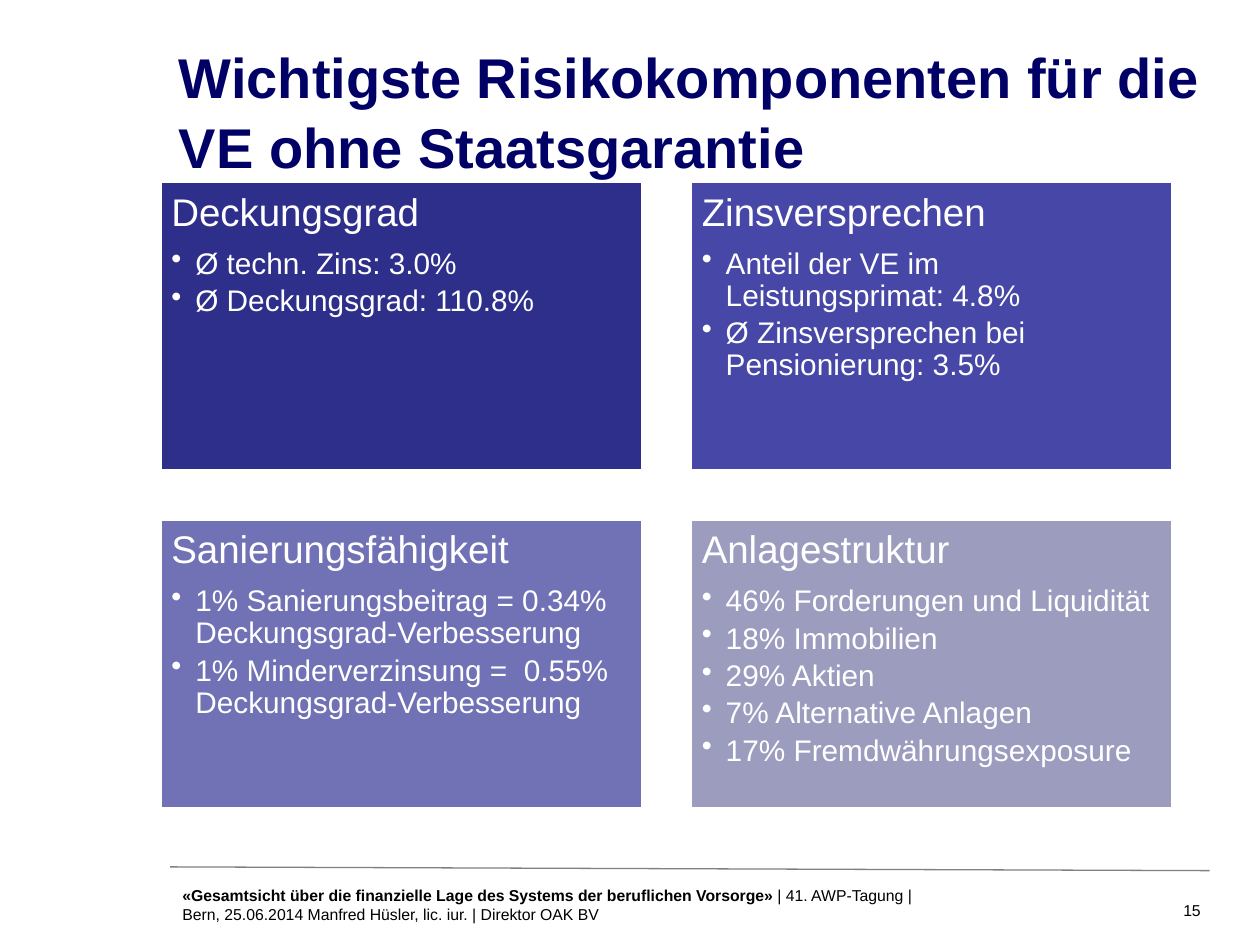
from dataclasses import dataclass

from lxml import etree
from pptx import Presentation
from pptx import util as u
from pptx.dml.color import RGBColor
from pptx.enum import shapes, text
from pptx.oxml.ns import qn

FONT = "Arial"
COLORS = {
    "title": "000066",
    "text": "000000",
    "white": "FFFFFF",
    "rule": "808080",
    "coverage": "2E2E8B",
    "interest": "4747A8",
    "recovery": "7171B5",
    "assets": "9C9CBF",
}

CARD_LEFT, CARD_TOP = 1.27, 1.44
CARD_WIDTH, CARD_HEIGHT = 3.83, 2.3
CARD_GAP = 0.38
CARD_INSET = 0.09
BULLET_INDENT = 0.19


@dataclass(frozen=True)
class Card:
    heading: str
    bullets: tuple[str, ...]
    color: str


CARDS = (
    Card("Deckungsgrad", ("Ø techn. Zins: 3.0%", "Ø Deckungsgrad: 110.8%"), "coverage"),
    Card(
        "Zinsversprechen",
        (
            "Anteil der VE im Leistungsprimat: 4.8%",
            "Ø Zinsversprechen bei Pensionierung: 3.5%",
        ),
        "interest",
    ),
    Card(
        "Sanierungsfähigkeit",
        (
            "1% Sanierungsbeitrag = 0.34% Deckungsgrad-Verbesserung",
            "1% Minderverzinsung =  0.55% Deckungsgrad-Verbesserung",
        ),
        "recovery",
    ),
    Card(
        "Anlagestruktur",
        (
            "46% Forderungen und Liquidität",
            "18% Immobilien",
            "29% Aktien",
            "7% Alternative Anlagen",
            "17% Fremdwährungsexposure",
        ),
        "assets",
    ),
)


def rgb(name: str) -> RGBColor:
    return RGBColor.from_string(COLORS[name])


def add_run(paragraph, content: str, size: float, color: str, bold: bool = False) -> None:
    run = paragraph.add_run()
    run.text = content
    run.font.name = FONT
    run.font.size = u.Pt(size)
    run.font.bold = bold
    run.font.color.rgb = rgb(color)


def set_insets(frame, inset: float) -> None:
    frame.margin_left = frame.margin_right = u.Inches(inset)
    frame.margin_top = frame.margin_bottom = u.Inches(inset)


def add_bullet(paragraph) -> None:
    properties = paragraph._p.get_or_add_pPr()
    properties.set("marL", str(u.Inches(BULLET_INDENT)))
    properties.set("indent", str(-u.Inches(BULLET_INDENT)))
    etree.SubElement(properties, qn("a:buChar"), char="•")


def add_title(slide) -> None:
    title = slide.shapes.title
    title.left, title.top = u.Inches(1.42), u.Inches(0.35)
    title.width, title.height = u.Inches(8.16), u.Inches(1.08)
    frame = title.text_frame
    set_insets(frame, 0)
    frame.word_wrap = True
    frame.auto_size = text.MSO_AUTO_SIZE.NONE
    frame.vertical_anchor = text.MSO_ANCHOR.BOTTOM
    paragraph = frame.paragraphs[0]
    paragraph.alignment = text.PP_ALIGN.LEFT
    paragraph.line_spacing = 1.05
    add_run(
        paragraph,
        "Wichtigste Risikokomponenten für die VE ohne Staatsgarantie",
        32,
        "title",
        bold=True,
    )


def add_card(slide, card: Card, row: int, column: int) -> None:
    shape = slide.shapes.add_shape(
        shapes.MSO_SHAPE.RECTANGLE,
        u.Inches(CARD_LEFT + column * (CARD_WIDTH + CARD_GAP)),
        u.Inches(CARD_TOP + row * (CARD_HEIGHT + CARD_GAP)),
        u.Inches(CARD_WIDTH),
        u.Inches(CARD_HEIGHT),
    )
    shape.shadow.inherit = False
    shape.fill.solid()
    shape.fill.fore_color.rgb = rgb(card.color)
    shape.line.color.rgb = rgb("white")
    shape.line.width = u.Pt(2)

    frame = shape.text_frame
    frame.word_wrap = True
    frame.vertical_anchor = text.MSO_ANCHOR.TOP
    set_insets(frame, CARD_INSET)
    heading = frame.paragraphs[0]
    heading.alignment = text.PP_ALIGN.LEFT
    heading.line_spacing = 0.9
    heading.space_after = u.Pt(8)
    add_run(heading, card.heading, 22, "white")
    for bullet in card.bullets:
        paragraph = frame.add_paragraph()
        add_bullet(paragraph)
        paragraph.level = 1
        paragraph.alignment = text.PP_ALIGN.LEFT
        paragraph.line_spacing = 0.9
        paragraph.space_after = u.Pt(3)
        add_run(paragraph, bullet, 17, "white")


def add_footer_rule(slide) -> None:
    rule = slide.shapes.add_connector(
        shapes.MSO_CONNECTOR.STRAIGHT,
        u.Inches(9.6), u.Inches(6.91), u.Inches(1.35), u.Inches(6.88),
    )
    rule.line.color.rgb = rgb("rule")
    rule.line.width = u.Pt(0.75)
    etree.SubElement(rule._element.spPr, qn("a:effectLst"))


def add_footer(slide) -> None:
    box = slide.shapes.add_textbox(
        u.Inches(1.35), u.Inches(6.97), u.Inches(6.03), u.Inches(0.4)
    )
    box.text_frame.word_wrap = True
    paragraph = box.text_frame.paragraphs[0]
    paragraph.line_spacing = 1.05
    add_run(
        paragraph,
        "«Gesamtsicht über die finanzielle Lage des Systems der beruflichen Vorsorge» ",
        9,
        "text",
        bold=True,
    )
    add_run(
        paragraph,
        "| 41. AWP-Tagung | Bern, 25.06.2014 Manfred Hüsler, lic. iur. | Direktor OAK BV",
        9,
        "text",
    )


def add_page_number(slide) -> None:
    box = slide.shapes.add_textbox(
        u.Inches(9.17), u.Inches(7.14), u.Inches(0.36), u.Inches(0.16)
    )
    box.text_frame.word_wrap = True
    set_insets(box.text_frame, 0)
    paragraph = box.text_frame.paragraphs[0]
    paragraph.alignment = text.PP_ALIGN.RIGHT
    paragraph.line_spacing = 1.05
    add_run(paragraph, "15", 9, "text")


def main() -> None:
    presentation = Presentation()
    presentation.slide_width, presentation.slide_height = u.Inches(10), u.Inches(7.5)
    slide = presentation.slides.add_slide(presentation.slide_layouts.get_by_name("Title Only"))
    add_title(slide)
    for index, card in enumerate(CARDS):
        row, column = divmod(index, 2)
        add_card(slide, card, row, column)
    add_footer_rule(slide)
    add_footer(slide)
    add_page_number(slide)
    presentation.save("out.pptx")


if __name__ == "__main__":
    main()
